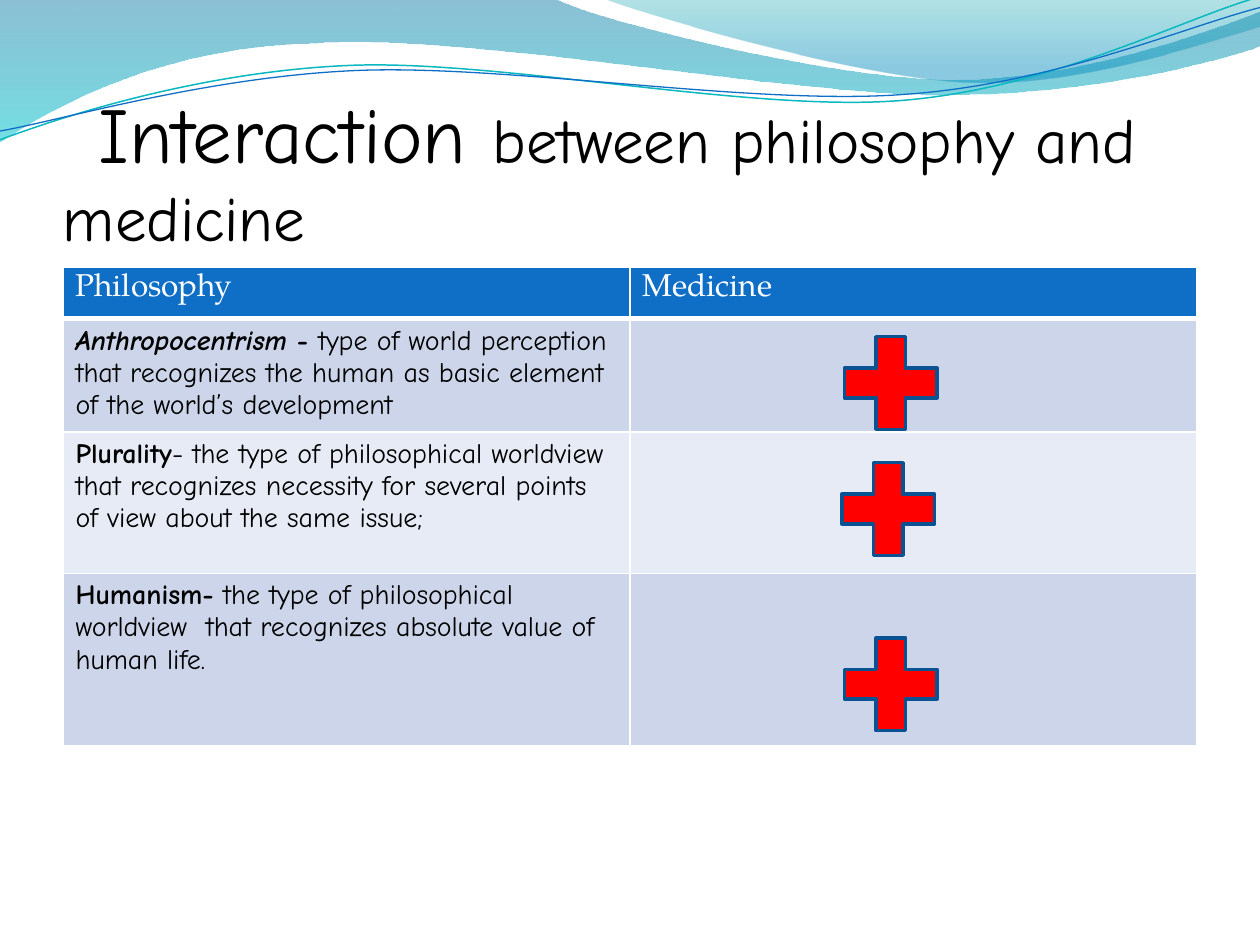
from dataclasses import dataclass

from lxml import etree
from pptx import Presentation
from pptx.dml.color import RGBColor
from pptx.enum.shapes import MSO_SHAPE
from pptx.enum.text import MSO_ANCHOR
from pptx.oxml.ns import qn
from pptx.util import Inches, Pt

PLUS = MSO_SHAPE.MATH_PLUS
BOTTOM = MSO_ANCHOR.BOTTOM


@dataclass(frozen=True)
class Theme:
    white: str = "FFFFFF"
    black: str = "000000"
    header: str = "0F6FC6"
    bands: tuple = ("CCD5EA", "E7EBF5")
    plus_fill: str = "FF0000"
    plus_line: str = "0B5292"
    teal_line: str = "0AB8BF"
    body_font: str = "Comic Neue"
    header_font: str = "TeX Gyre Pagella"
    title_size: float = 45
    subtitle_size: float = 36
    header_size: float = 18
    body_size: float = 16


THEME = Theme()

# Each wave: start point, then segments of one point (line) or three (curve).
# Gradient stops are position, colour and opacity in percent.
FILLED_WAVES = [
    ((0, 0), [
        [(4.4, -0.01)],
        [(4.76, 0.17), (6.64, 0.63), (7.58, 0.63)],
        [(8.53, 0.63), (9.58, 0.26), (10, 0.09)],
        [(10.01, 0.36)],
        [(9.83, 0.44), (8.7, 0.76), (7.46, 0.75)],
        [(6.22, 0.75), (3.82, 0.28), (2.57, 0.34)],
        [(1.29, 0.36), (0.46, 0.83), (-0.01, 1.13)],
    ], [(0, "0074A1", 45), (100, "00C6CF", 55)]),
    ((4.79, -0.01), [
        [(5.09, 0.11), (6.82, 0.62), (7.69, 0.65)],
        [(8.56, 0.69), (9.61, 0.32), (10, 0.21)],
        [(10, 0)],
    ], [(0, "00A1A9", 30), (80, "008BBF", 45)]),
]
LINE_WAVES = [
    ((0, 1.11), [
        [(0.48, 0.93), (1.58, 0.57), (2.77, 0.52)],
        [(3.95, 0.47), (5.93, 0.89), (7.13, 0.8)],
        [(8.33, 0.71), (9.38, 0.15), (9.98, -0.02)],
    ], THEME.teal_line, 0.85),
    ((0, 1.04), [
        [(0.47, 0.96), (1.64, 0.61), (2.83, 0.56)],
        [(4.03, 0.51), (5.97, 0.84), (7.17, 0.75)],
        [(8.36, 0.67), (9.41, 0.21), (10, 0.06)],
    ], THEME.header, 0.75),
]

HEADERS = ["Philosophy", "Medicine"]
CONCEPTS = [
    [("Anthropocentrism", {"bold": True, "italic": True}),
     (" - ", {"bold": True}),
     ("type of world perception that recognizes the human as basic element "
      "of the world’s development", {})],
    [("Plurality", {"bold": True}),
     ("- the type of philosophical worldview that recognizes necessity for "
      "several points of view about the same issue;", {})],
    [("Humanism-", {"bold": True}),
     (" the type of philosophical worldview  that recognizes absolute value "
      "of human life.", {})],
]
ROW_HEIGHTS = [0.41, 0.82, 1.12, 1.37]
PLUS_POSITIONS = [(6.57, 2.54), (6.55, 3.54), (6.57, 4.93)]


def rgb(value):
    return RGBColor.from_string(value)


def add_span(para, text, font, size, color, **formats):
    span = para.add_run()
    span.text = text
    span.font.color.rgb = rgb(color)
    for name, value in {"name": font, "size": Pt(size), **formats}.items():
        setattr(span.font, name, value)


def bend_segments(wave, segments):
    """Turn the straight segments that have control points into curves."""
    lines = list(wave._element.spPr.iter(qn("a:lnTo")))
    for line, segment in zip(lines, segments):
        if len(segment) == 1:
            continue
        curve = etree.Element(qn("a:cubicBezTo"))
        for x, y in segment:
            etree.SubElement(curve, qn("a:pt"), x=str(Inches(x) - wave.left),
                             y=str(Inches(y) - wave.top))
        line.getparent().replace(line, curve)


def add_wave(page, start, segments, closed):
    builder = page.shapes.build_freeform(Inches(start[0]), Inches(start[1]))
    ends = [(Inches(x), Inches(y)) for *_, (x, y) in segments]
    builder.add_line_segments(ends, close=closed)
    wave = builder.convert_to_shape()
    bend_segments(wave, segments)
    wave.shadow.inherit = False
    return wave


def fill_gradient(shape, stops):
    """Fill from top to bottom with partly transparent colours."""
    shape.fill.gradient()
    shape.fill.gradient_angle = 270
    for stop, (position, color, _) in zip(shape.fill.gradient_stops, stops):
        stop.position = position / 100
        stop.color.rgb = rgb(color)
    colors = shape._element.spPr.iter(qn("a:srgbClr"))
    for color, (_, _, opacity) in zip(colors, stops):
        etree.SubElement(color, qn("a:alpha"), val=str(opacity * 1000))


def add_waves(page):
    for start, segments, stops in FILLED_WAVES:
        wave = add_wave(page, start, segments, closed=True)
        fill_gradient(wave, stops)
        wave.line.fill.background()
    for start, segments, color, width in LINE_WAVES:
        wave = add_wave(page, start, segments, closed=False)
        wave.fill.background()
        wave.line.color.rgb = rgb(color)
        wave.line.width = Pt(width)


def add_title(page, left, top, width, height):
    box = page.shapes.add_textbox(left, top, width, height)
    formats = {"word_wrap": True, "vertical_anchor": BOTTOM, "margin_left": 0,
               "margin_right": 0, "margin_top": Inches(0.05),
               "margin_bottom": 0}
    for name, value in formats.items():
        setattr(box.text_frame, name, value)
    para = box.text_frame.paragraphs[0]
    para._p.get_or_add_pPr().set("indent", str(Inches(0.28)))
    for text, size in [("Interaction ", THEME.title_size),
                       ("between philosophy and medicine",
                        THEME.subtitle_size)]:
        add_span(para, text, THEME.body_font, size, THEME.black)


def style_cell(cell, color, bottom_width=1):
    """Set white borders and a plain fill."""
    properties = cell._tc.get_or_add_tcPr()
    for side, width in {"L": 1, "R": 1, "T": 1, "B": bottom_width}.items():
        border = etree.SubElement(properties, qn(f"a:ln{side}"),
                                  w=str(Pt(width)))
        fill = etree.SubElement(border, qn("a:solidFill"))
        etree.SubElement(fill, qn("a:srgbClr"), val=THEME.white)
    cell.fill.solid()
    cell.fill.fore_color.rgb = rgb(color)


def add_comparison(page, left, top, width):
    table = page.shapes.add_table(
        len(ROW_HEIGHTS), len(HEADERS), left, top, width,
        Inches(sum(ROW_HEIGHTS))).table
    for row, height in zip(table.rows, ROW_HEIGHTS):
        row.height = Inches(height)
    for column, text in enumerate(HEADERS):
        cell = table.cell(0, column)
        style_cell(cell, THEME.header, bottom_width=3)
        add_span(cell.text_frame.paragraphs[0], text, THEME.header_font,
                 THEME.header_size, THEME.white, bold=False)
    for index, spans in enumerate(CONCEPTS):
        for column in range(len(HEADERS)):
            style_cell(table.cell(index + 1, column), THEME.bands[index % 2])
        para = table.cell(index + 1, 0).text_frame.paragraphs[0]
        for text, formats in spans:
            add_span(para, text, THEME.body_font, THEME.body_size,
                     THEME.black, **formats)


def add_plus(page, left, top, size):
    plus = page.shapes.add_shape(PLUS, left, top, size, size)
    plus.shadow.inherit = False
    plus.fill.solid()
    plus.fill.fore_color.rgb = rgb(THEME.plus_fill)
    plus.line.color.rgb = rgb(THEME.plus_line)
    plus.line.width = Pt(2)


def main():
    deck = Presentation()
    deck.slide_width, deck.slide_height = Inches(10), Inches(7.5)
    page = deck.slides.add_slide(deck.slide_layouts[6])
    add_waves(page)
    add_title(page, Inches(0.5), Inches(0.77), Inches(9), Inches(1.25))
    add_comparison(page, Inches(0.5), Inches(2.12), Inches(9))
    for left, top in PLUS_POSITIONS:
        add_plus(page, Inches(left), Inches(top), Inches(1))
    deck.save("out.pptx")


if __name__ == "__main__":
    main()
